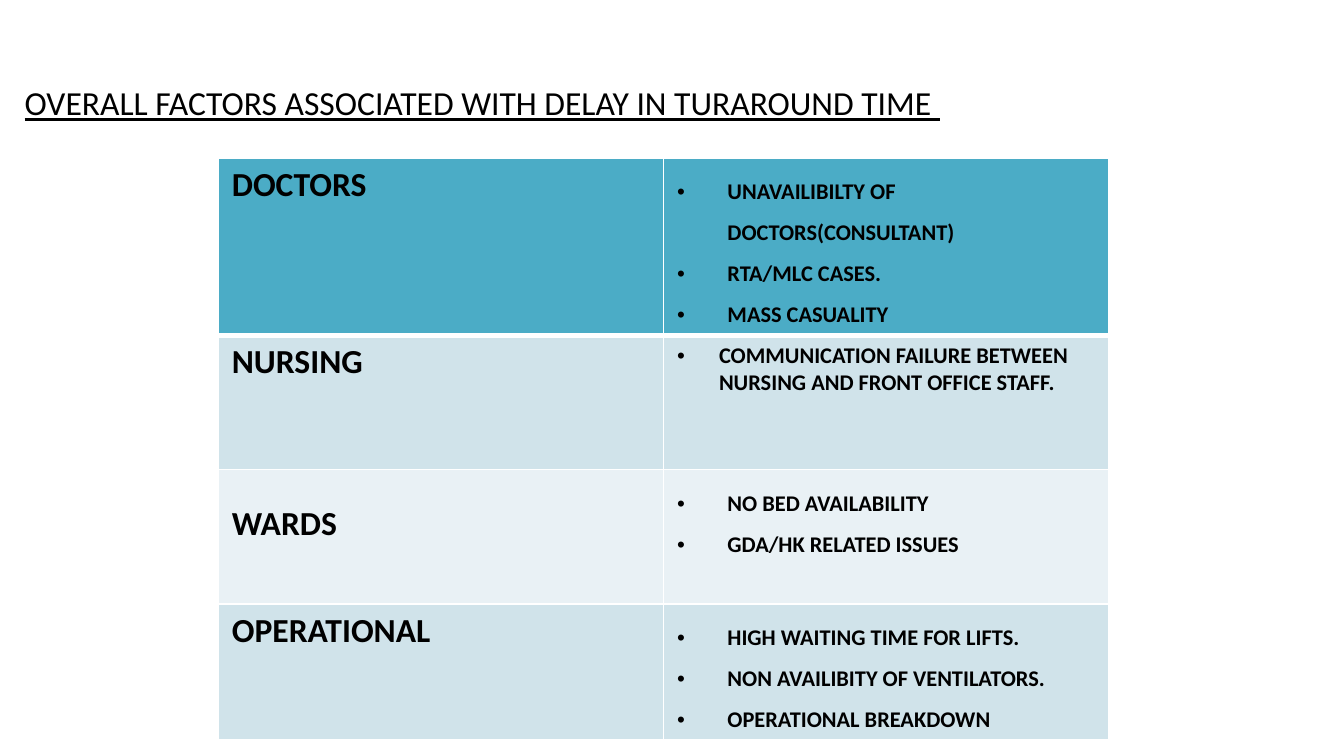
from lxml import etree
from pptx import Presentation
from pptx.dml.color import RGBColor
from pptx.enum.text import MSO_ANCHOR, MSO_AUTO_SIZE, PP_ALIGN
from pptx.oxml.ns import qn
from pptx.util import Pt

TOP = MSO_ANCHOR.TOP
LEFT = PP_ALIGN.LEFT
NO_AUTOFIT = MSO_AUTO_SIZE.NONE
TITLE_ONLY = 5

FONT = "Calibri"
COLORS = {
    "text": "000000",
    "border": "FFFFFF",
    "header": "4BACC6",
    "band": "D0E3EA",
    "light": "E9F1F5",
}
TITLE = "OVERALL FACTORS ASSOCIATED WITH DELAY IN TURAROUND TIME "

# group, factors, fill, row height, bullet indent, line spacing, label top margin
FACTORS = [
    ("DOCTORS",
     ["UNAVAILIBILTY OF DOCTORS(CONSULTANT)", "RTA/MLC CASES.", "MASS CASUALITY"],
     "header", 90.6, 27, 1.5, 3.6),
    ("NURSING",
     ["COMMUNICATION FAILURE BETWEEN NURSING AND FRONT OFFICE STAFF."],
     "band", 72, 22.5, 1, 3.6),
    ("WARDS",
     ["NO BED AVAILABILITY", "GDA/HK RELATED ISSUES"],
     "light", 72, 27, 1.5, 18),
    ("OPERATIONAL",
     ["HIGH WAITING TIME FOR LIFTS.", "NON AVAILIBITY OF VENTILATORS.",
      "OPERATIONAL BREAKDOWN"],
     "band", 72, 27, 1.5, 3.6),
]


def format_runs(para, size, bold=False, underline=False):
    for span in para.runs:
        span.font.name = FONT
        span.font.size = Pt(size)
        span.font.bold = bold
        span.font.underline = underline
        span.font.color.rgb = RGBColor.from_string(COLORS["text"])


def add_title(page):
    box = page.shapes.title
    box.left, box.top, box.width, box.height = Pt(6), Pt(40.5), Pt(666), Pt(29)
    frame = box.text_frame
    frame.text = TITLE
    frame.word_wrap = True
    frame.auto_size = NO_AUTOFIT
    frame.vertical_anchor = TOP
    frame.paragraphs[0].alignment = LEFT
    format_runs(frame.paragraphs[0], 18, underline=True)


def set_borders(cell, widths):
    """Draw cell borders; widths maps side letters L, R, T, B to points."""
    properties = cell._tc.get_or_add_tcPr()
    for side, width in widths.items():
        line = etree.SubElement(properties, qn(f"a:ln{side}"), w=str(Pt(width)))
        fill = etree.SubElement(line, qn("a:solidFill"))
        etree.SubElement(fill, qn("a:srgbClr"), val=COLORS["border"])


def set_bullet(para, indent):
    properties = para._p.get_or_add_pPr()
    properties.set("marL", str(Pt(indent)))
    properties.set("indent", str(-Pt(indent)))
    etree.SubElement(properties, qn("a:buFont"), typeface="Arial")
    etree.SubElement(properties, qn("a:buChar"), char="•")


def fill_label(cell, label, margin_top):
    cell.margin_top = Pt(margin_top)
    cell.text_frame.text = label
    format_runs(cell.text_frame.paragraphs[0], 18, bold=True)


def fill_factors(cell, factors, indent, spacing):
    cell.text_frame.text = "\n".join(factors)
    for para in cell.text_frame.paragraphs:
        para.line_spacing = spacing
        set_bullet(para, indent)
        format_runs(para, 12, bold=True)


def add_factor_table(page):
    height = sum(row[3] for row in FACTORS)
    frame = page.shapes.add_table(
        len(FACTORS), 2, Pt(117), Pt(84.5), Pt(477), Pt(height))
    table = frame.table
    for index, row in enumerate(FACTORS):
        label, factors, fill, row_height, indent, spacing, margin_top = row
        table.rows[index].height = Pt(row_height)
        top = 3 if index == 1 else 1
        bottom = 3 if index == 0 else 1
        for column in range(2):
            cell = table.cell(index, column)
            set_borders(cell, {"L": 1, "R": 1, "T": top, "B": bottom})
            cell.fill.solid()
            cell.fill.fore_color.rgb = RGBColor.from_string(COLORS[fill])
        fill_label(table.cell(index, 0), label, margin_top)
        fill_factors(table.cell(index, 1), factors, indent, spacing)


def main():
    deck = Presentation()
    deck.slide_width, deck.slide_height = Pt(720), Pt(405)
    page = deck.slides.add_slide(deck.slide_layouts[TITLE_ONLY])
    add_factor_table(page)
    add_title(page)
    deck.save("out.pptx")


if __name__ == "__main__":
    main()
